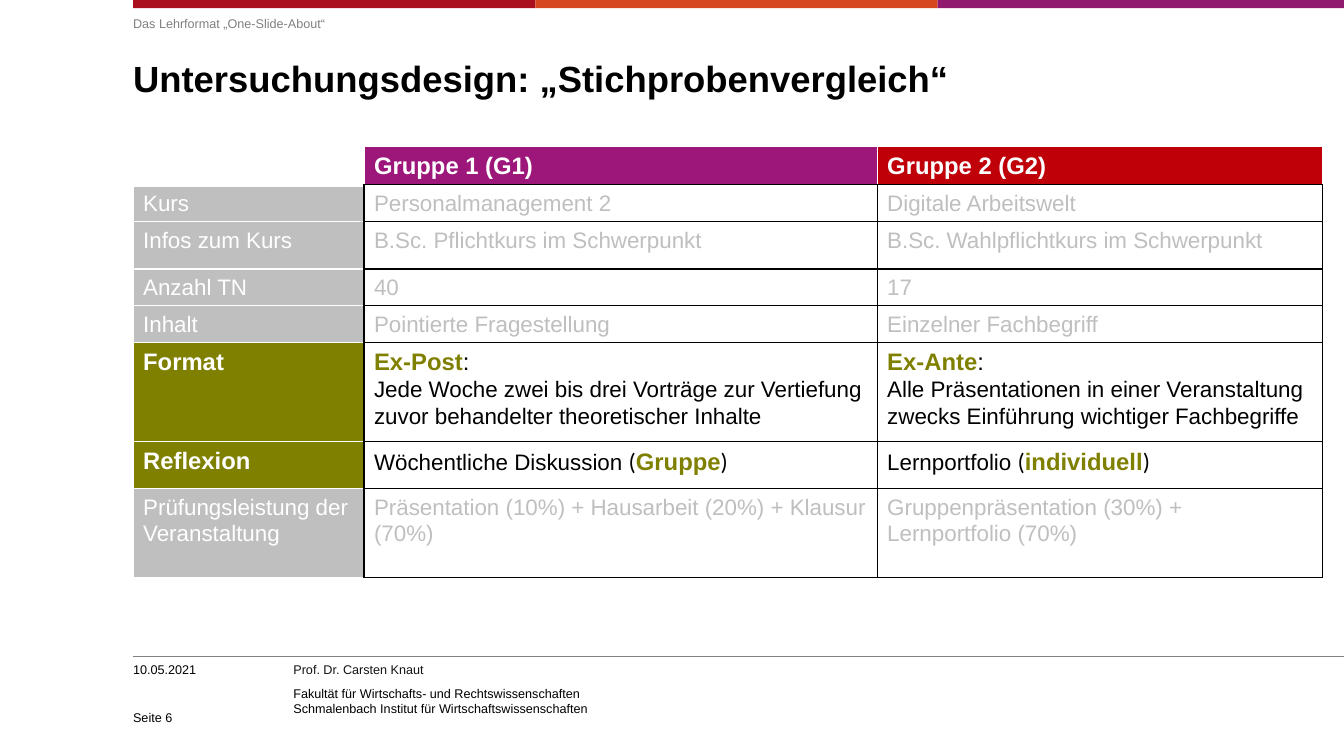
import copy

import pptx
import pptx.dml.color
import pptx.enum.shapes
import pptx.enum.text
import pptx.oxml
import pptx.oxml.ns
import pptx.util

PX = 9144  # 100 px per inch
LEFT = 132
COLORS = {
    "white": "FFFFFF", "black": "000000", "ink": "141313", "gray": "808080",
    "muted": "BFBFBF", "olive": "7F8000", "purple": "9D167A", "red": "C00009",
    "bar_red": "AA0F1F", "bar_orange": "D7471F", "bar_purple": "901B6E",
}
COLUMNS = [229, 509, 442]
HEADERS = [("Gruppe 1 (G1)", "purple"), ("Gruppe 2 (G2)", "red")]
STRONG = {"size": 17, "bold": True, "color": "olive"}
BRACKET = {"size": 17, "font": "Calibri"}

# Row height, label, then the runs of each group; plain strings are muted rows
ROWS = [
    (28, "Kurs", "Personalmanagement 2", "Digitale Arbeitswelt"),
    (47, "Infos zum Kurs", "B.Sc. Pflichtkurs im Schwerpunkt",
     "B.Sc. Wahlpflichtkurs im Schwerpunkt"),
    (28, "Anzahl TN", "40", "17"),
    (28, "Inhalt", "Pointierte Fragestellung", "Einzelner Fachbegriff"),
    (98, "Format",
     [("Ex-Post", STRONG), (": \n", {"size": 17}),
      ("Jede Woche zwei bis drei Vorträge zur Vertiefung zuvor behandelter "
       "theoretischer Inhalte", {})],
     [("Ex-Ante", STRONG), (": \n", {"size": 17}),
      ("Alle Präsentationen in einer Veranstaltung zwecks Einführung "
       "wichtiger Fachbegriffe", {})]),
    (47, "Reflexion",
     [("Wöchentliche Diskussion ", {}), ("(", BRACKET),
      ("Gruppe", STRONG), (")", BRACKET)],
     [("Lernportfolio ", {}), ("(", BRACKET),
      ("individuell", STRONG), (")", BRACKET)]),
    (88, "Prüfungsleistung der Veranstaltung",
     "Präsentation (10%) + Hausarbeit (20%) + Klausur (70%)",
     "Gruppenpräsentation (30%) + Lernportfolio (70%)"),
]


def rgb(color):
    return pptx.dml.color.RGBColor.from_string(COLORS[color])


def box(*lengths):
    return [length * PX for length in lengths]


def write(paragraph, text, size=16, color="black", bold=False, font="Arial"):
    """Add formatted text; each newline becomes a line break of the same size."""
    for index, line in enumerate(text.split("\n")):
        if index:
            paragraph.add_line_break()
            paragraph._p[-1].append(copy.deepcopy(run._r.rPr))
        if not line:
            continue
        run = paragraph.add_run()
        run.text = line
        run.font.size = pptx.util.Pt(size)
        run.font.bold = bold
        run.font.name = font
        run.font.color.rgb = rgb(color)


def prepare_frame(shape, anchor=pptx.enum.text.MSO_ANCHOR.TOP):
    frame = shape.text_frame
    frame.word_wrap = True
    frame.auto_size = pptx.enum.text.MSO_AUTO_SIZE.NONE
    frame.vertical_anchor = anchor
    frame.margin_left = frame.margin_top = 0
    frame.margin_right = frame.margin_bottom = 0
    return frame


def fill_placeholder(shape, place, text, **text_format):
    shape.left, shape.top, shape.width, shape.height = box(*place)
    paragraph = prepare_frame(shape).paragraphs[0]
    paragraph.alignment = pptx.enum.text.PP_ALIGN.LEFT
    paragraph.space_before = pptx.util.Pt(0)
    write(paragraph, text, **text_format)
    return paragraph


def add_note(slide, place, texts, anchor=pptx.enum.text.MSO_ANCHOR.TOP):
    """Add a small text box with one paragraph for each (text, color)."""
    frame = prepare_frame(slide.shapes.add_textbox(*box(*place)), anchor)
    for index, (text, color) in enumerate(texts):
        paragraph = frame.add_paragraph() if index else frame.paragraphs[0]
        if len(texts) > 1:
            paragraph.space_after = pptx.util.Pt(6)
        write(paragraph, text, size=9, color=color)


def add_bar(slide, left, width, color):
    bar = slide.shapes.add_shape(
        pptx.enum.shapes.MSO_SHAPE.RECTANGLE, *box(left, 0, width, 8))
    bar.shadow.inherit = False
    bar.fill.solid()
    bar.fill.fore_color.rgb = rgb(color)
    bar.line.fill.background()


def add_rule(slide, left, right, top):
    rule = slide.shapes.add_connector(
        pptx.enum.shapes.MSO_CONNECTOR.STRAIGHT, *box(left, top, right, top))
    rule.line.color.rgb = rgb("gray")
    rule.line.width = pptx.util.Pt(0.5)
    properties = rule._element.spPr
    properties.append(properties.makeelement(pptx.oxml.ns.qn("a:effectLst"), {}))


def style_cell(cell, fill, black_sides, bottom_width=1):
    """Draw the four borders, black on the named sides, and then the fill."""
    properties = cell._tc.get_or_add_tcPr()
    for side in "LRTB":
        color = COLORS["black" if side in black_sides else "white"]
        width = pptx.util.Pt(bottom_width if side == "B" else 1)
        properties.append(pptx.oxml.parse_xml(
            f'<a:ln{side} {pptx.oxml.ns.nsdecls("a")} w="{width}"><a:solidFill>'
            f'<a:srgbClr val="{color}"/></a:solidFill></a:ln{side}>'))
    cell.fill.solid()
    cell.fill.fore_color.rgb = rgb(fill)


def write_cell(cell, runs):
    paragraph = cell.text_frame.paragraphs[0]
    paragraph.line_spacing = 1.07
    for text, text_format in runs:
        write(paragraph, text, **text_format)


def add_comparison(slide):
    heights = [28] + [row[0] for row in ROWS]
    table = slide.shapes.add_table(
        len(heights), len(COLUMNS),
        *box(LEFT, 145, sum(COLUMNS), sum(heights))).table
    table.first_row = table.horz_banding = False
    for column, width in zip(table.columns, COLUMNS):
        column.width = width * PX
    for row, height in zip(table.rows, heights):
        row.height = height * PX

    corner = table.cell(0, 0)
    corner.margin_top = corner.margin_bottom = 0
    style_cell(corner, "white", "", bottom_width=3)
    for column, (text, color) in enumerate(HEADERS, 1):
        cell = table.cell(0, column)
        style_cell(cell, color, "B")
        write_cell(cell, [(text, {"size": 17, "bold": True, "color": "white"})])

    for row, (_, label, *groups) in enumerate(ROWS, 1):
        muted = isinstance(groups[0], str)
        cell = table.cell(row, 0)
        style_cell(cell, "muted" if muted else "olive", "R")
        write_cell(cell, [(label, {"size": 16 if muted else 17,
                                   "bold": not muted, "color": "white"})])
        for column, content in enumerate(groups, 1):
            cell = table.cell(row, column)
            style_cell(cell, "white", "LRTB")
            write_cell(cell, [(content, {"color": "muted"})] if muted else content)


def main():
    presentation = pptx.Presentation()
    presentation.slide_width, presentation.slide_height = box(1333, 750)
    slide = presentation.slides.add_slide(presentation.slide_layouts[1])

    add_bar(slide, LEFT, 399, "bar_red")
    add_bar(slide, 531, 399, "bar_orange")
    add_bar(slide, 930, 403, "bar_purple")
    add_rule(slide, LEFT, 1333, 651)

    title = fill_placeholder(
        slide.shapes.title, (LEFT, 57, 1181, 98),
        "Untersuchungsdesign: „Stichprobenvergleich“", size=26, bold=True)
    title.line_spacing = pptx.util.Pt(30)
    topic = fill_placeholder(
        slide.placeholders[1], (LEFT, 16, 1180, 24),
        "Das Lehrformat „One-Slide-About“", size=9, color="gray")
    properties = topic._p.get_or_add_pPr()
    properties.set("marL", "0")
    properties.set("indent", "0")
    properties.append(properties.makeelement(pptx.oxml.ns.qn("a:buNone"), {}))

    add_comparison(slide)

    add_note(slide, (291, 657, 431, 60), [
        ("Prof. Dr. Carsten Knaut", "ink"),
        ("Fakultät für Wirtschafts- und Rechtswissenschaften\n"
         "Schmalenbach Institut für Wirtschaftswissenschaften", "black")])
    add_note(slide, (LEFT, 657, 142, 20), [("10.05.2021", "black")])
    add_note(slide, (LEFT, 696, 142, 23), [("Seite 6", "black")],
             pptx.enum.text.MSO_ANCHOR.BOTTOM)
    presentation.save("out.pptx")


if __name__ == "__main__":
    main()
